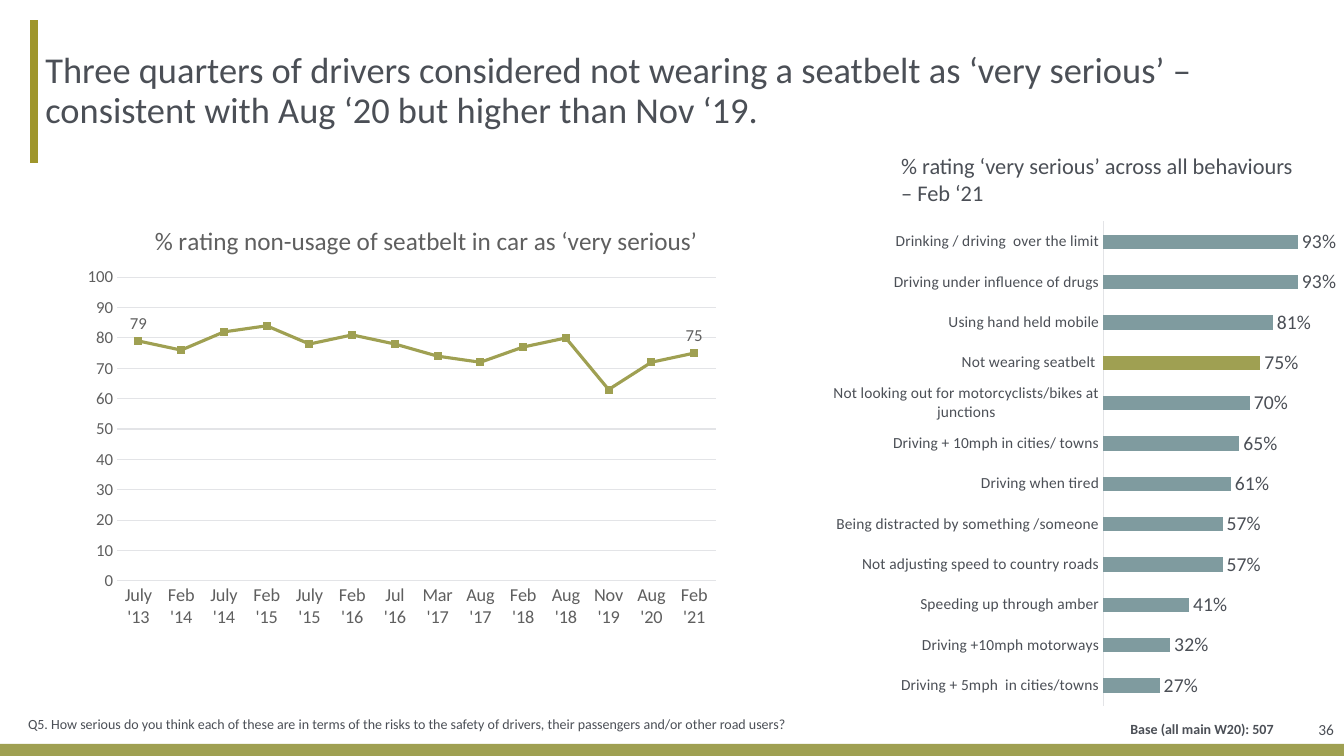
from dataclasses import dataclass

from lxml.etree import SubElement
from pptx import Presentation
from pptx.chart.data import CategoryChartData
from pptx.dml.color import RGBColor
from pptx.enum.chart import XL_CHART_TYPE as ChartType
from pptx.enum.chart import XL_LABEL_POSITION as LabelPosition
from pptx.enum.chart import XL_TICK_MARK as TickMark
from pptx.enum.shapes import MSO_CONNECTOR as Connector
from pptx.enum.shapes import MSO_SHAPE as Shape
from pptx.enum.text import MSO_ANCHOR as Anchor
from pptx.enum.text import MSO_AUTO_SIZE as AutoSize
from pptx.enum.text import PP_ALIGN as Align
from pptx.oxml.ns import qn
from pptx.util import Inches, Pt


@dataclass(frozen=True)
class Theme:
    face: str = "Calibri"
    ink: RGBColor = RGBColor.from_string("4B4F56")
    chart_ink: RGBColor = RGBColor.from_string("5F5F5F")
    olive: RGBColor = RGBColor.from_string("9FA052")
    accent: RGBColor = RGBColor.from_string("9F962B")
    teal: RGBColor = RGBColor.from_string("7F9B9F")
    rule: RGBColor = RGBColor.from_string("E3E4E7")
    title: int = 26
    chart_title: int = 18
    heading: int = 16
    bar_label: int = 14
    month: int = 13
    scale: int = 12
    behaviour: int = 11
    note: int = 10


THEME = Theme()

TREND = {
    "July '13": 79, "Feb '14": 76, "July '14": 82, "Feb '15": 84, "July '15": 78,
    "Feb '16": 81, "Jul '16": 78, "Mar '17": 74, "Aug '17": 72, "Feb '18": 77,
    "Aug '18": 80, "Nov '19": 63, "Aug '20": 72, "Feb '21": 75,
}
HIGHLIGHT = "Not wearing seatbelt "
BEHAVIOURS = {
    "Drinking / driving  over the limit": 0.93,
    "Driving under influence of drugs": 0.93,
    "Using hand held mobile": 0.81,
    HIGHLIGHT: 0.75,
    "Not looking out for motorcyclists/bikes at junctions": 0.70,
    "Driving + 10mph in cities/ towns": 0.65,
    "Driving when tired": 0.61,
    "Being distracted by something /someone": 0.57,
    "Not adjusting speed to country roads": 0.57,
    "Speeding up through amber": 0.41,
    "Driving +10mph motorways": 0.32,
    "Driving + 5mph  in cities/towns": 0.27,
}


def apply(target, **values):
    for name, value in values.items():
        setattr(target, name, value)


def style_font(font, size, color=THEME.ink, bold=False):
    apply(font, name=THEME.face, size=Pt(size), bold=bold)
    font.color.rgb = color


def style_line(line, color, width):
    line.color.rgb = color
    line.width = Pt(width)


def add_text(page, box, lines, size, align=Align.LEFT, bold=False, anchor=Anchor.TOP):
    frame = page.shapes.add_textbox(*map(Inches, box)).text_frame
    apply(frame, word_wrap=True, vertical_anchor=anchor)
    frame.text = "\n".join(lines)
    for para in frame.paragraphs:
        para.alignment = align
        style_font(para.font, size, bold=bold)


def set_layout(element, index, **fractions):
    """Place a chart part by fractions of the chart; index is its slot in the part."""
    layout = element.find(qn("c:layout"))
    if layout is None:
        layout = element.makeelement(qn("c:layout"))
        element.insert(index, layout)
    manual = SubElement(layout, qn("c:manualLayout"))
    if "w" in fractions:
        SubElement(manual, qn("c:layoutTarget")).set("val", "inner")
    for side in ("x", "y"):
        SubElement(manual, qn(f"c:{side}Mode")).set("val", "edge")
    for name, value in fractions.items():
        SubElement(manual, qn(f"c:{name}")).set("val", str(value))


def add_chart(page, box, kind, values, number_format):
    """Add a one-series chart with plain axes and return it."""
    data = CategoryChartData(number_format=number_format)
    data.categories = list(values)
    data.add_series("Series 1", list(values.values()))
    chart = page.shapes.add_chart(kind, *map(Inches, box), data).chart
    apply(chart, has_legend=False, has_title=False)
    for axis in (chart.category_axis, chart.value_axis):
        apply(axis, major_tick_mark=TickMark.NONE, minor_tick_mark=TickMark.NONE,
              has_major_gridlines=False)
    style_line(chart.category_axis.format.line, THEME.rule, 0.75)
    return chart


def add_trend(page, box):
    chart = add_chart(page, box, ChartType.LINE, TREND, "General")
    style_font(chart.font, THEME.note, THEME.chart_ink)
    style_font(chart.category_axis.tick_labels.font, THEME.month, THEME.chart_ink)

    scale = chart.value_axis
    apply(scale, minimum_scale=0, maximum_scale=100, major_unit=10,
          has_major_gridlines=True)
    style_font(scale.tick_labels.font, THEME.scale, THEME.chart_ink)
    scale.format.line.fill.background()
    style_line(scale.major_gridlines.format.line, THEME.rule, 0.75)

    title = chart.chart_title
    title.text_frame.text = "% rating non-usage of seatbelt in car as ‘very serious’"
    style_font(title.text_frame.paragraphs[0].font, THEME.chart_title, THEME.chart_ink)
    set_layout(title._element, 1, x=0.16, y=0.05)
    set_layout(chart._chartSpace.chart.plotArea, 0, x=0.113, y=0.179, w=0.848, h=0.665)

    plot = chart.plots[0]
    plot.vary_by_categories = False
    series = plot.series[0]
    series.smooth = False
    series.marker.style = None
    style_line(series.format.line, THEME.olive, 2.25)
    series.data_labels.show_value = False
    for index in (0, len(TREND) - 1):
        label = series.points[index].data_label
        label.position = LabelPosition.ABOVE
        style_font(label.font, THEME.scale, THEME.chart_ink)


def add_ranking(page, box):
    left, top, _, _ = box
    add_text(page, (left + 0.59, top - 0.59, 4.3, 0.64),
             ["% rating ‘very serious’ across all behaviours", "– Feb ‘21"], THEME.heading)
    chart = add_chart(page, box, ChartType.BAR_CLUSTERED, BEHAVIOURS, "0%")
    style_font(chart.font, THEME.bar_label)
    chart.category_axis.reverse_order = True
    style_font(chart.category_axis.tick_labels.font, THEME.behaviour)
    apply(chart.value_axis, visible=False, minimum_scale=0, maximum_scale=1)
    set_layout(chart._chartSpace.chart.plotArea, 0, x=0.529, y=0.029, w=0.408, h=0.94)

    plot = chart.plots[0]
    apply(plot, gap_width=182, vary_by_categories=False, has_data_labels=True)
    apply(plot.data_labels, show_value=True, position=LabelPosition.OUTSIDE_END,
          number_format="0%", number_format_is_linked=False)
    style_font(plot.data_labels.font, THEME.bar_label)
    series = plot.series[0]
    highlight = series.points[list(BEHAVIOURS).index(HIGHLIGHT)]
    for part, color in ((series, THEME.teal), (highlight, THEME.olive)):
        part.format.fill.solid()
        part.format.fill.fore_color.rgb = color


def add_header(page, box):
    left, top, width, height = box
    marker = page.shapes.add_connector(
        Connector.STRAIGHT, *map(Inches, (left - 0.03, top, left - 0.03, top + height)))
    style_line(marker.line, THEME.accent, 6)
    SubElement(marker._element.spPr, qn("a:effectLst"))

    title = page.shapes.title
    apply(title, **dict(zip(("left", "top", "width", "height"), map(Inches, box))))
    frame = title.text_frame
    apply(frame, margin_left=Inches(0.08), margin_top=0, margin_right=0, margin_bottom=0,
          vertical_anchor=Anchor.MIDDLE, word_wrap=True, auto_size=AutoSize.NONE)
    frame.text = ("Three quarters of drivers considered not wearing a seatbelt as "
                  "‘very serious’ – consistent with Aug ‘20 but higher than Nov ‘19.")
    para = frame.paragraphs[0]
    apply(para, alignment=Align.LEFT, line_spacing=0.9)
    style_font(para.font, THEME.title)


def add_footer(page, box):
    left, top, width, height = box
    band = page.shapes.add_shape(Shape.RECTANGLE, *map(Inches, box))
    band.shadow.inherit = False
    band.fill.solid()
    band.fill.fore_color.rgb = THEME.olive
    band.line.fill.background()
    add_text(page, (left + 0.18, top - 0.33, 8.47, 0.33),
             ["Q5. How serious do you think each of these are in terms of the risks to the "
              "safety of drivers, their passengers and/or other road users?"], THEME.note)
    add_text(page, (left + 8.79, top - 0.28, 3.94, 0.32), ["Base (all main W20): 507"],
             THEME.note, Align.RIGHT, bold=True)
    add_text(page, (left + width - 0.92, top - 0.43, 0.92, 0.58), ["36"],
             THEME.behaviour, Align.RIGHT, anchor=Anchor.MIDDLE)


def main():
    deck = Presentation()
    apply(deck, slide_width=Inches(13.33), slide_height=Inches(7.5))
    page = deck.slides.add_slide(deck.slide_layouts.get_by_name("Title Only"))
    add_footer(page, (0, 7.38, 13.33, 0.12))
    add_header(page, (0.37, 0.2, 11.65, 1.42))
    add_trend(page, (0.37, 1.94, 7, 4.53))
    add_ranking(page, (8.25, 2.05, 5.09, 5.11))
    deck.save("out.pptx")


if __name__ == "__main__":
    main()
